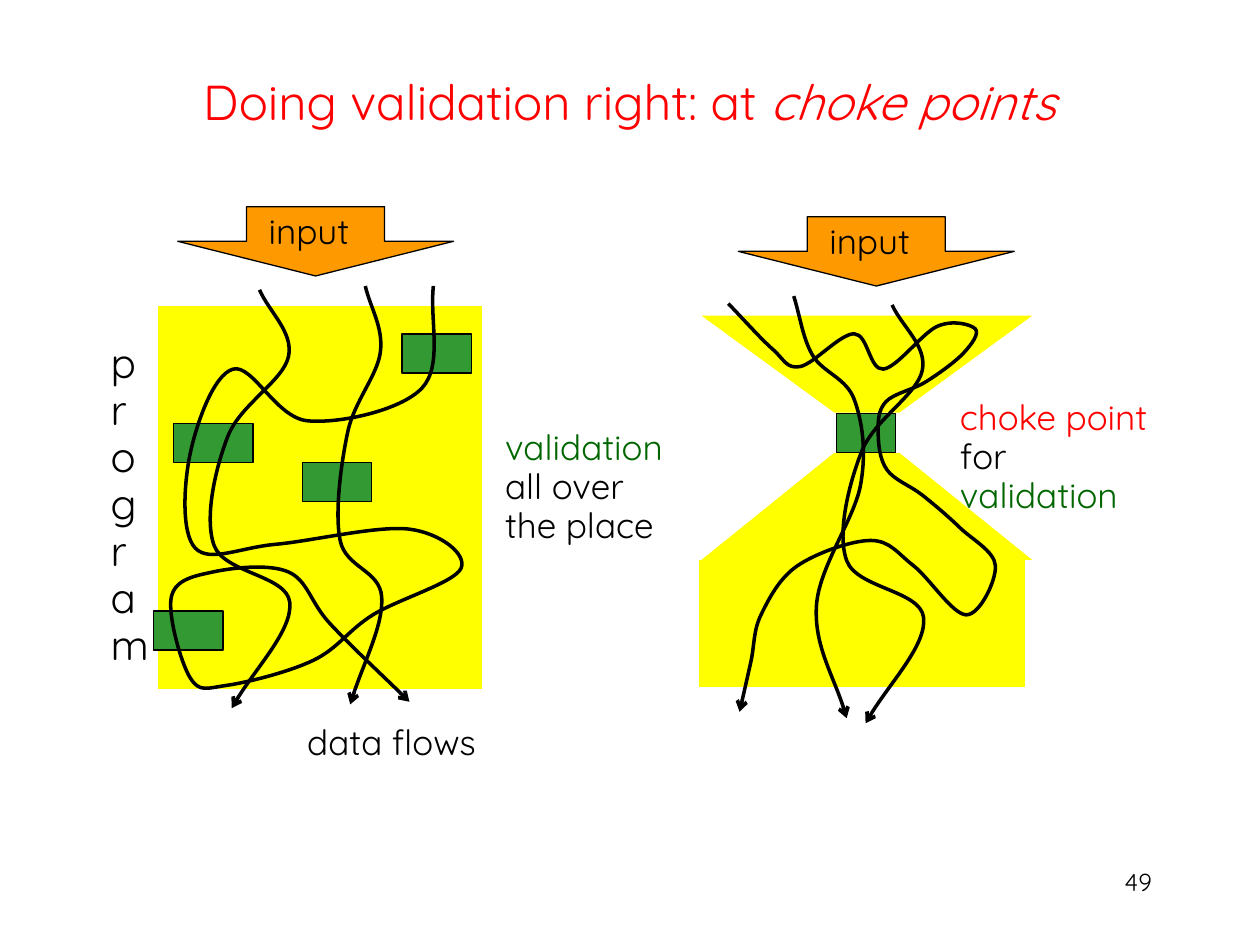
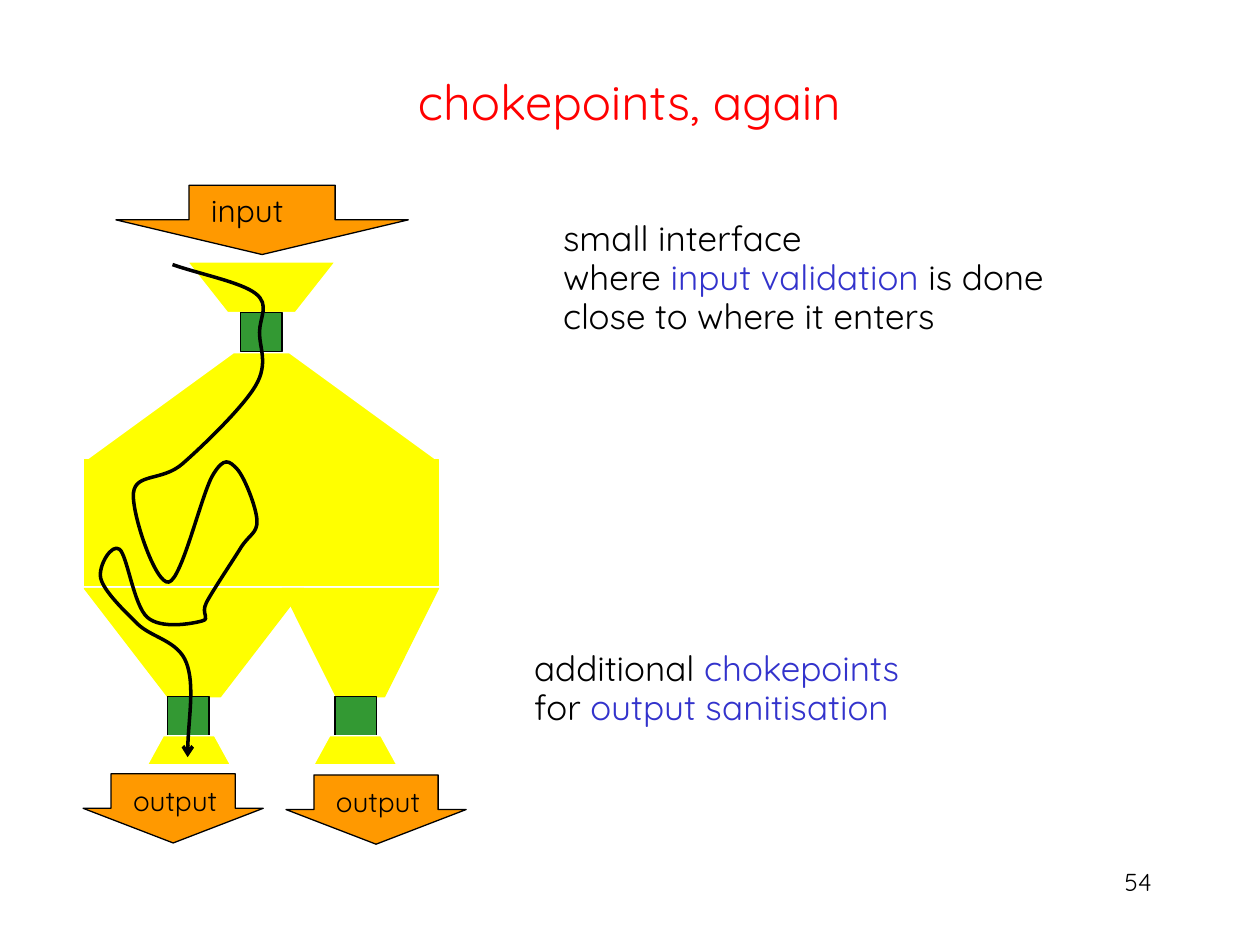
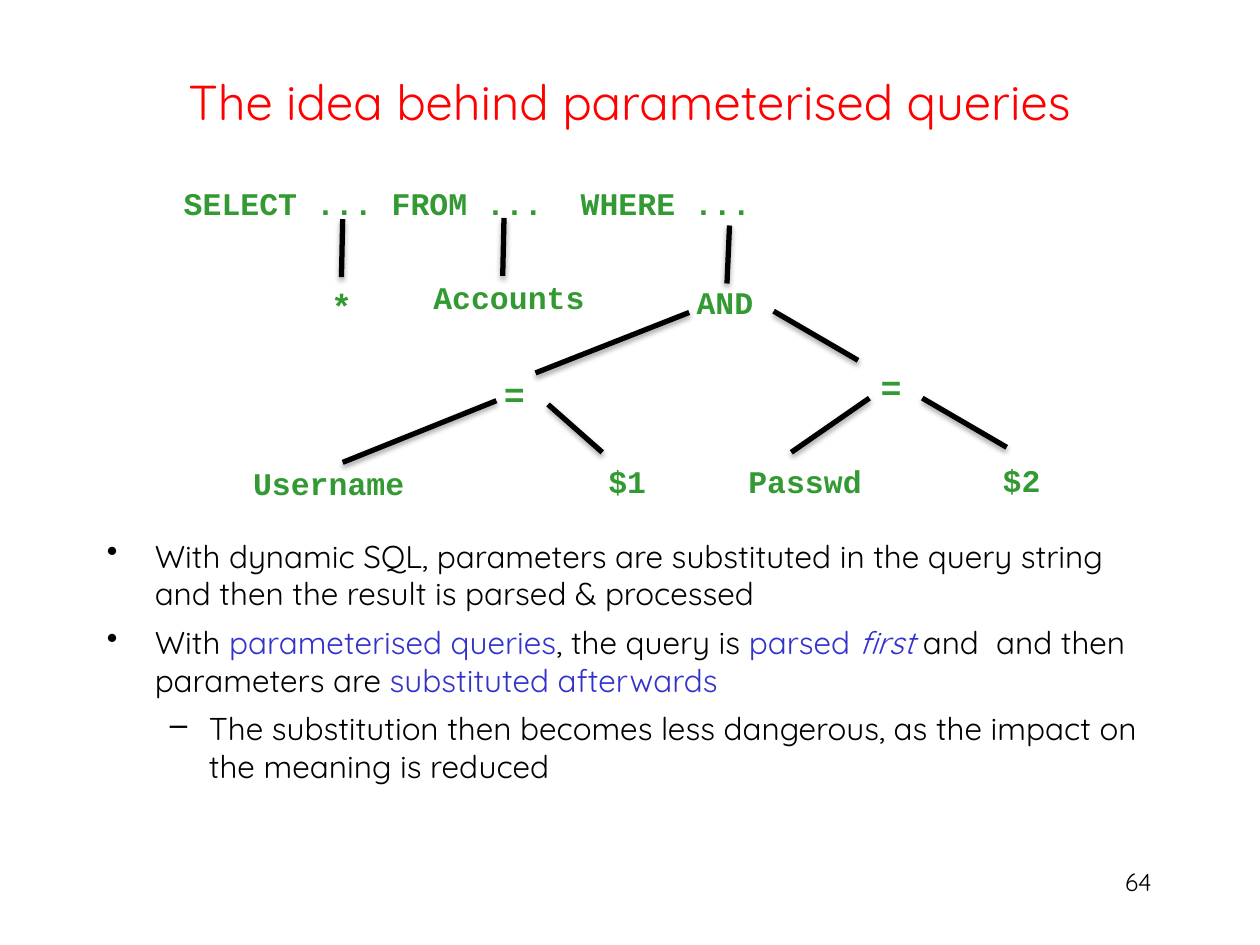
from lxml import etree
from pptx import Presentation
from pptx.dml.color import RGBColor
from pptx.enum.shapes import MSO_CONNECTOR, MSO_SHAPE
from pptx.enum.text import MSO_ANCHOR, MSO_AUTO_SIZE, PP_ALIGN
from pptx.oxml.ns import qn
from pptx.util import Inches, Pt

RECTANGLE = MSO_SHAPE.RECTANGLE
TRAPEZOID = MSO_SHAPE.TRAPEZOID
DOWN_ARROW = MSO_SHAPE.DOWN_ARROW
STRAIGHT = MSO_CONNECTOR.STRAIGHT
TOP, MIDDLE = MSO_ANCHOR.TOP, MSO_ANCHOR.MIDDLE
LEFT, CENTER, RIGHT = PP_ALIGN.LEFT, PP_ALIGN.CENTER, PP_ALIGN.RIGHT
GROW = MSO_AUTO_SIZE.SHAPE_TO_FIT_TEXT

COLORS = {
    "title": "FF0000",
    "text": "000000",
    "line": "000000",
    "edge": "FFFFFF",
    "program": "FFFF00",
    "gate": "339933",
    "flow": "FF9900",
    "validation": "006600",
    "term": "3333CC",
    "code": "339933",
}
BODY_FONT, CODE_FONT = "Quicksand", "Courier New"
TERM = {"color": "term"}


def rgb(name):
    return RGBColor.from_string(COLORS[name])


def add_xml(parent, tag, **attributes):
    return etree.SubElement(parent, qn(tag), attributes)


def write(frame, paragraphs, size=20, color="text", font=BODY_FONT, bold=False,
          align=LEFT, spacing=None, before=None):
    for index, runs in enumerate(paragraphs):
        paragraph = frame.paragraphs[0] if index == 0 else frame.add_paragraph()
        paragraph.alignment = align
        paragraph.line_spacing = spacing
        paragraph.space_before = before
        for run_text in [runs] if isinstance(runs, str) else runs:
            words, changes = (run_text, {}) if isinstance(run_text, str) else run_text
            run = paragraph.add_run()
            run.text = words
            run.font.name = font
            run.font.size = Pt(changes.get("size", size))
            run.font.bold = bold
            run.font.italic = changes.get("italic", False)
            run.font.color.rgb = rgb(changes.get("color", color))


class Deck:
    def __init__(self):
        self.show = Presentation()
        self.show.slide_width, self.show.slide_height = Inches(10), Inches(7.5)
        self.slide = None

    def start(self, title, number):
        self.slide = self.show.slides.add_slide(self.show.slide_layouts[6])
        self.text((0.75, 0.3, 8.49, 0.92), [title], wrap=True, anchor=MIDDLE,
                  size=28, color="title", align=CENTER, spacing=1.16)
        self.text((7.17, 6.83, 2.07, 0.49), [str(number)], wrap=True,
                  size=14, align=RIGHT)

    def text(self, box, paragraphs, wrap=False, anchor=TOP, **style):
        frame = self.slide.shapes.add_textbox(*map(Inches, box)).text_frame
        frame.word_wrap = wrap
        frame.vertical_anchor = anchor
        if not wrap:
            frame.auto_size = GROW
        write(frame, paragraphs, **style)
        return frame

    def label(self, box, paragraphs, **style):
        return self.text(box, paragraphs, spacing=0.93, **style)

    def code(self, box, words, size=18):
        self.text(box, [words], size=size, color="code", font=CODE_FONT, bold=True)

    def bullets(self, box, items):
        frame = self.text(box, [runs for _, runs in items], wrap=True,
                          size=18, before=Pt(6))
        for paragraph, (level, _) in zip(frame.paragraphs, items):
            mark, margin, hang = (("•", 0.38, 0.38), ("–", 0.81, 0.31))[level]
            paragraph.level = level
            properties = paragraph._p.get_or_add_pPr()
            properties.set("marL", str(Inches(margin)))
            properties.set("indent", str(-Inches(hang)))
            add_xml(add_xml(properties, "a:buClr"), "a:srgbClr", val=COLORS["text"])
            add_xml(properties, "a:buChar", char=mark)

    def shape(self, kind, box, fill, line="line", adjust=(), turned=False):
        shape = self.slide.shapes.add_shape(kind, *map(Inches, box))
        shape.shadow.inherit = False
        shape.fill.solid()
        shape.fill.fore_color.rgb = rgb(fill)
        shape.line.color.rgb = rgb(line)
        shape.line.width = Pt(0.75)
        for index, value in enumerate(adjust):
            shape.adjustments[index] = value
        if turned:
            shape.rotation = 180
        return shape

    def block(self, box, line="edge"):
        self.shape(RECTANGLE, box, "program", line)

    def funnel(self, box, slant, turned=False, line="edge"):
        self.shape(TRAPEZOID, box, "program", line, [slant], turned)

    def gate(self, left, top, width=0.55, height=0.31):
        self.shape(RECTANGLE, (left, top, width, height), "gate")

    def arrow(self, box, runs, adjust=()):
        frame = self.shape(DOWN_ARROW, box, "flow", adjust=adjust).text_frame
        frame.vertical_anchor = TOP
        write(frame, [runs], spacing=0.93)

    def data_flow(self, *points):
        knots = [(Inches(x), Inches(y)) for x, y in points]
        builder = self.slide.shapes.build_freeform(*knots[0])
        builder.add_line_segments(knots[1:], close=False)
        curve = builder.convert_to_shape()
        curve.shadow.inherit = False
        curve.fill.background()
        curve.line.color.rgb = rgb("line")
        curve.line.width = Pt(2)
        add_xml(curve.line._get_or_add_ln(), "a:tailEnd", type="arrow")
        self.smooth(curve)

    def smooth(self, curve):
        knots = [(int(p.get("x")), int(p.get("y")))
                 for p in curve._element.xpath(".//a:pathLst//a:pt")]

        def mirror(end, inner):
            return tuple(2 * e - i for e, i in zip(end, inner))

        chain = [mirror(knots[0], knots[1]), *knots, mirror(knots[-1], knots[-2])]
        for index, segment in enumerate(curve._element.xpath(".//a:lnTo")):
            before, first, last, after = chain[index:index + 4]
            leave = [f + (l - b) / 6 for b, f, l in zip(before, first, last)]
            arrive = [l - (a - f) / 6 for f, l, a in zip(first, last, after)]
            bend = etree.Element(qn("a:cubicBezTo"))
            for x, y in (leave, arrive, last):
                add_xml(bend, "a:pt", x=str(round(x)), y=str(round(y)))
            segment.getparent().replace(segment, bend)

    def branch(self, *ends):
        line = self.slide.shapes.add_connector(STRAIGHT, *map(Inches, ends))
        line.line.color.rgb = rgb("line")
        line.line.width = Pt(3)
        effects = add_xml(line._element.spPr, "a:effectLst")
        shadow = add_xml(effects, "a:outerShdw", blurRad=str(Pt(3.1)), dist=str(Pt(1.8)),
                         dir="5400000", rotWithShape="0")
        tint = add_xml(shadow, "a:srgbClr", val=COLORS["line"])
        add_xml(tint, "a:alpha", val="35000")


def validation_slide(deck):
    deck.start(["Doing validation right: at ", ("choke points", {"italic": True})], 49)
    deck.funnel((5.55, 3.59, 2.66, 0.86), 1.24)
    deck.funnel((5.55, 2.5, 2.66, 0.78), 1.37, turned=True)
    deck.block((5.55, 4.45, 2.58, 1), line="program")
    deck.arrow((1.41, 1.64, 2.19, 0.55), " input")
    deck.block((1.25, 2.42, 2.58, 3.05))
    deck.gate(1.38, 3.36, width=0.63)
    deck.gate(6.64, 3.28, width=0.47)
    deck.arrow((5.86, 1.72, 2.19, 0.55), " input")
    deck.label((7.52, 3.12, 1.78, 1.04),
               [[("choke point", {"color": "title"})], "for",
                [("validation", {"color": "validation"})]])
    deck.data_flow((6.3, 2.35), (6.45, 2.82), (6.78, 3.17), (6.83, 3.85),
                   (6.48, 4.81), (6.72, 5.7))
    for left, top in ((2.4, 3.67), (1.22, 4.85), (3.19, 2.65)):
        deck.gate(left, top)
    deck.data_flow((2.06, 2.3), (2.29, 2.83), (1.81, 3.46), (1.7, 4.33),
                   (2.3, 4.78), (1.84, 5.62))
    deck.data_flow((2.9, 2.27), (3.02, 2.79), (2.76, 3.43), (2.7, 4.29),
                   (3.03, 4.74), (2.78, 5.59))
    deck.label((2.34, 5.7, 1.6, 0.41), ["data flows"])
    deck.label((3.91, 3.36, 1.52, 1.04),
               [[("validation", {"color": "validation"})], "all over", "the place"])
    deck.data_flow((7.08, 2.42), (7.32, 2.94), (6.84, 3.58), (6.72, 4.45),
                   (7.33, 4.9), (6.87, 5.74))
    deck.data_flow((3.44, 2.27), (3.35, 3.08), (2.44, 3.34), (1.85, 2.93),
                   (1.51, 3.6), (1.55, 4.35), (2.19, 4.32), (3.25, 4.2),
                   (3.66, 4.51), (2.96, 4.88), (2.49, 5.24), (1.8, 5.44),
                   (1.51, 5.38), (1.36, 4.74), (1.69, 4.54), (2.29, 4.54),
                   (2.62, 4.95), (3.25, 5.57))
    deck.label((0.78, 2.66, 0.5, 2.73), list("program"), size=24)
    deck.data_flow((5.78, 2.41), (6.13, 2.77), (6.35, 2.91), (6.78, 2.65),
                   (7.01, 2.93), (7.44, 2.59), (7.74, 2.61), (7.65, 2.8),
                   (7.35, 3.03), (7.03, 3.19), (6.97, 3.44), (7.04, 3.73),
                   (7.32, 3.93), (7.62, 4.19), (7.9, 4.49), (7.67, 4.88),
                   (7.25, 4.49), (6.91, 4.29), (6.33, 4.49), (6.04, 4.88),
                   (5.96, 5.25), (5.87, 5.65))


def chokepoints_slide(deck):
    deck.start("chokepoints, again", 54)
    deck.label((4.37, 1.7, 4.25, 1.04),
               ["small interface", ["where ", ("input validation ", TERM), "is done"],
                "close to where it enters"])
    deck.label((4.14, 5.11, 3.35, 0.73),
               [["additional ", ("chokepoints", TERM)],
                ["for ", ("output sanitisation", TERM)]])
    deck.funnel((0.67, 2.8, 2.81, 0.86), 1.375)
    deck.funnel((1.49, 2.08, 1.17, 0.4), 0.788, turned=True)
    deck.block((0.67, 3.65, 2.81, 1), line="program")
    deck.gate(1.91, 2.48, width=0.33)
    deck.arrow((0.92, 1.47, 2.32, 0.55), [" ", ("input", {"size": 18})])
    for left, width, slant in ((0.67, 1.74, 0.769), (2.24, 1.24, 0.499)):
        deck.funnel((left, 4.67, width, 0.86), slant, turned=True, line="program")
    for gate_left, outlet_left in ((1.33, 1.17), (2.66, 2.49)):
        deck.gate(gate_left, 5.53, width=0.33)
        deck.funnel((outlet_left, 5.84, 0.66, 0.23), 0.548)
    deck.data_flow((1.37, 2.1), (2.03, 2.33), (2.06, 2.64), (2.03, 3.06),
                   (1.45, 3.68), (1.06, 3.91), (1.34, 4.62), (1.69, 3.77),
                   (1.88, 3.72), (2.04, 4.13), (1.91, 4.35), (1.64, 4.78),
                   (1.6, 4.93), (1.17, 4.9), (0.95, 4.36), (0.8, 4.59),
                   (1.09, 4.95), (1.48, 5.26), (1.49, 6.01))
    for left, top in ((2.27, 6.15), (0.66, 6.14)):
        deck.arrow((left, top, 1.43, 0.55), [" ", ("output", {"size": 16})],
                   adjust=(0.689, 0.5))


def queries_slide(deck):
    deck.start("The idea behind parameterised queries", 64)
    deck.bullets((0.75, 4.21, 8.49, 1.5), [
        (0, "With dynamic SQL, parameters are substituted in the query string "
            "and then the result is parsed & processed"),
        (0, ["With ", ("parameterised queries", TERM), ", the query is ",
             ("parsed ", TERM), ("first ", {"color": "term", "italic": True}),
             "and  and then parameters are ", ("substituted afterwards", TERM)]),
        (1, "The substitution then becomes less dangerous, as the impact on "
            "the meaning is reduced"),
    ])
    for left, top, width, words in (
            (1.21, 1.41, 4.88, " SELECT ... FROM ...  WHERE ..."),
            (3.34, 2.16, 1.41, "Accounts"), (5.43, 2.2, 0.65, "AND"),
            (1.91, 3.63, 1.41, "Username"), (4.73, 3.62, 0.5, "$1"),
            (5.84, 3.62, 1.11, "Passwd"), (7.86, 3.61, 0.5, "$2")):
        deck.code((left, top, width, 0.4), words)
    for left, top, symbol in ((2.53, 2.21, "*"), (3.9, 2.91, "="), (6.89, 2.85, "=")):
        deck.code((left, top, 0.37, 0.44), symbol, size=20)
    for ends in ((2.72, 1.74, 2.71, 2.2), (4, 1.73, 3.99, 2.19),
                 (5.79, 1.79, 5.77, 2.25), (4.25, 2.96, 5.47, 2.48),
                 (6.14, 2.47, 6.81, 2.86), (2.72, 3.67, 3.94, 3.18),
                 (4.35, 3.21, 4.78, 3.59), (6.28, 3.59, 6.9, 3.16),
                 (7.32, 3.16, 7.99, 3.55)):
        deck.branch(*ends)


def main():
    deck = Deck()
    validation_slide(deck)
    chokepoints_slide(deck)
    queries_slide(deck)
    deck.show.save("out.pptx")


if __name__ == "__main__":
    main()
